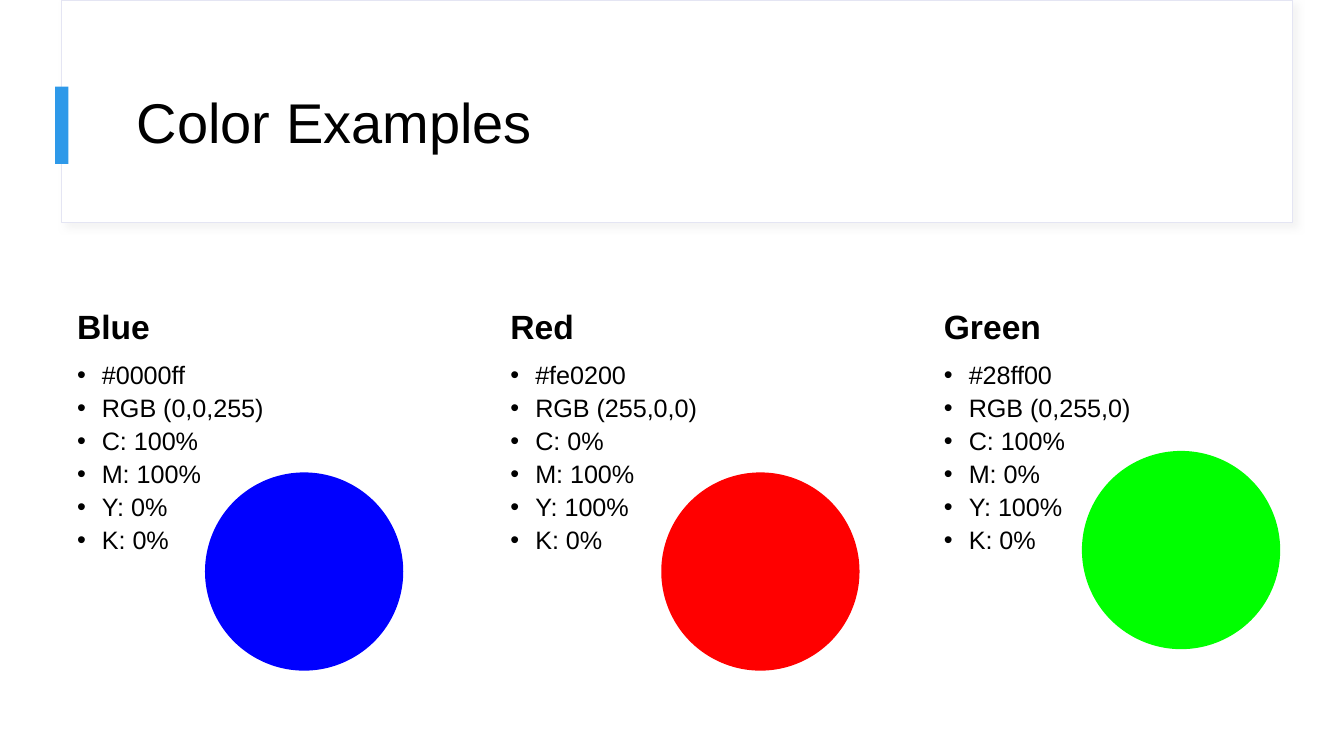
"""Builds a slide with three colour examples and their codes."""
from lxml import etree
from pptx import Presentation
from pptx.dml.color import RGBColor
from pptx.enum.shapes import MSO_SHAPE
from pptx.enum.text import MSO_ANCHOR, PP_ALIGN
from pptx.oxml import parse_xml
from pptx.oxml.ns import qn
from pptx.util import Pt

RECTANGLE, OVAL = MSO_SHAPE.RECTANGLE, MSO_SHAPE.OVAL
TOP, MIDDLE, BOTTOM = MSO_ANCHOR.TOP, MSO_ANCHOR.MIDDLE, MSO_ANCHOR.BOTTOM
LEFT = PP_ALIGN.LEFT
PX = 4572
COLORS = {
    "white": "FFFFFF", "text": "000000", "border": "E4E5F3",
    "accent": "2E99E9", "shadow": "D9D9D9",
    "Blue": "0000FF", "Red": "FF0000", "Green": "00FF00",
}
EXAMPLES = [
    ("Blue", ["#0000ff", "RGB (0,0,255)", "C: 100%", "M: 100%", "Y: 0%", "K: 0%"], (305, 703)),
    ("Red", ["#fe0200", "RGB (255,0,0)", "C: 0%", "M: 100%", "Y: 100%", "K: 0%"], (984, 703)),
    ("Green", ["#28ff00", "RGB (0,255,0)", "C: 100%", "M: 0%", "Y: 100%", "K: 0%"], (1610, 671)),
]
FIRST_LEFT, COLUMN_STEP, COLUMN_WIDTH = 95, 645, 540
CIRCLE_SIZE = 295
INDENT = 37

presentation = Presentation()
presentation.slide_width = 2000 * PX
presentation.slide_height = 1125 * PX
slide = presentation.slides.add_slide(presentation.slide_layouts[6])


def add_filled_shape(kind, box, color):
    shape = slide.shapes.add_shape(kind, *[value * PX for value in box])
    shape.shadow.inherit = False
    shape.fill.solid()
    shape.fill.fore_color.rgb = RGBColor.from_string(COLORS[color])
    shape.line.fill.background()
    return shape


def add_text(box, lines, size, anchor, spacing, before=0, bold=False):
    frame = slide.shapes.add_textbox(*[value * PX for value in box]).text_frame
    frame.word_wrap = True
    frame.vertical_anchor = anchor
    for index, line in enumerate(lines):
        paragraph = frame.add_paragraph() if index else frame.paragraphs[0]
        paragraph.alignment = LEFT
        paragraph.line_spacing = spacing
        paragraph.space_before = Pt(before)
        run = paragraph.add_run()
        run.text = line
        run.font.name = "Arial"
        run.font.size = Pt(size)
        run.font.bold = bold
        run.font.color.rgb = RGBColor.from_string(COLORS["text"])
    return frame


panel = add_filled_shape(RECTANGLE, (92, 0, 1832, 331), "white")
panel.line.color.rgb = RGBColor.from_string(COLORS["border"])
panel.line.width = Pt(0.75)
effects = panel.element.spPr.find(qn("a:effectLst"))
effects.append(parse_xml(
    '<a:outerShdw xmlns:a="http://schemas.openxmlformats.org/drawingml/2006/main" '
    f'blurRad="{Pt(4)}" dist="{Pt(3)}" dir="2700000" algn="tl" rotWithShape="0">'
    f'<a:srgbClr val="{COLORS["shadow"]}"><a:alpha val="30000"/></a:srgbClr></a:outerShdw>'
))
add_filled_shape(RECTANGLE, (82, 129, 20, 115), "accent")
add_text((184, 90, 1668, 194), ["Color Examples"], 30, MIDDLE, 0.9)

for column, (name, codes, circle_position) in enumerate(EXAMPLES):
    left = FIRST_LEFT + column * COLUMN_STEP
    add_text((left, 389, COLUMN_WIDTH, 136), [name], 18, BOTTOM, 1.1, 7.5, True)
    code_frame = add_text((left, 525, COLUMN_WIDTH, 486), codes, 13.5, TOP, 1.0, 1.5)
    for paragraph in code_frame.paragraphs:
        properties = paragraph._p.get_or_add_pPr()
        properties.set("marL", str(INDENT * PX))
        properties.set("indent", str(-INDENT * PX))
        etree.SubElement(properties, qn("a:buFont")).set("typeface", "Arial")
        etree.SubElement(properties, qn("a:buChar")).set("char", "•")

for name, codes, circle_position in EXAMPLES:
    add_filled_shape(OVAL, (*circle_position, CIRCLE_SIZE, CIRCLE_SIZE), name)

presentation.save("out.pptx")
